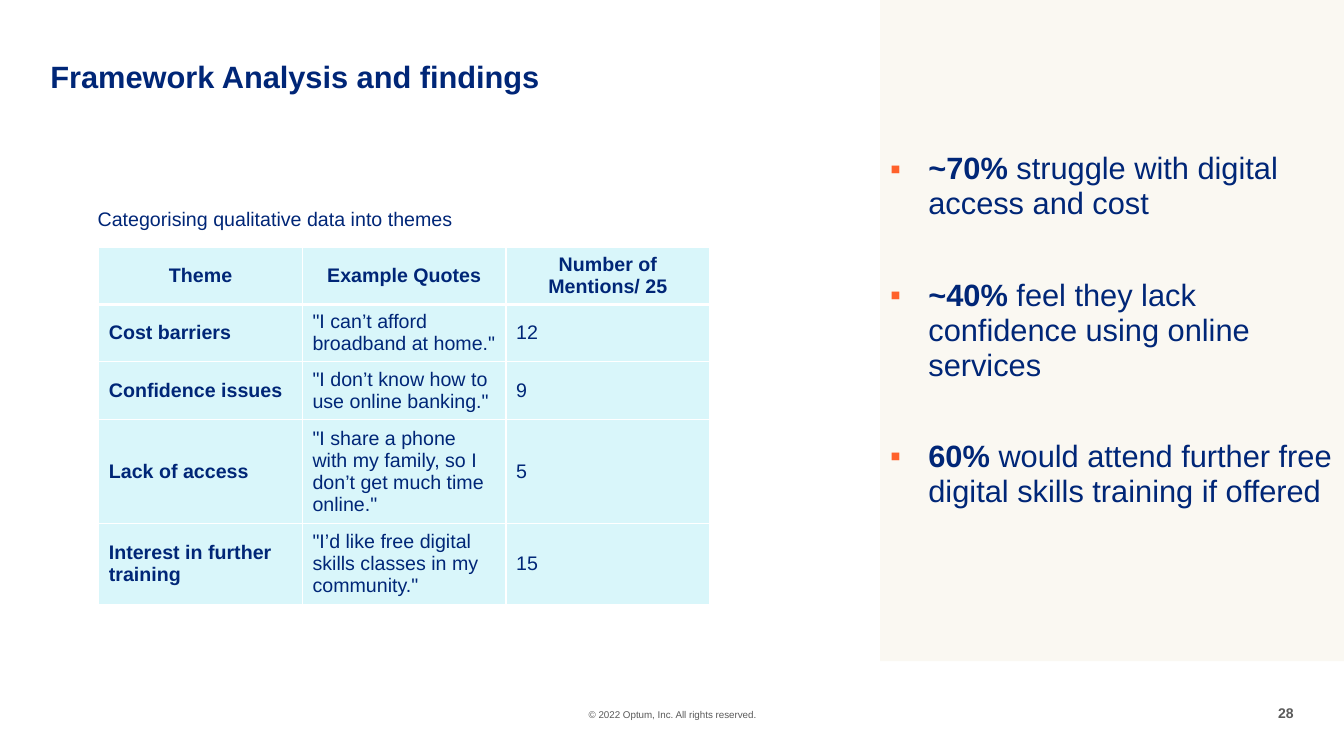
import pptx
import pptx.util
import pptx.dml.color
import pptx.enum.shapes
import pptx.enum.text
from dataclasses import dataclass
from lxml import etree
from pptx.util import Inches, Pt

ALIGN = pptx.enum.text.PP_ALIGN
MIDDLE = pptx.enum.text.MSO_ANCHOR.MIDDLE
A = "http://schemas.openxmlformats.org/drawingml/2006/main"


@dataclass(frozen=True)
class Theme:
    font: str = "Arial"
    navy: str = "002677"
    grey: str = "5A5A5A"
    orange: str = "FF612B"
    cream: str = "FAF8F2"
    aqua: str = "D9F6FA"
    white: str = "FFFFFF"
    heading: int = 22
    body: int = 14
    page: int = 10
    legal: int = 7


T = Theme()

FINDINGS = [
    ("~70% ", "struggle with digital access and cost"),
    ("~40% ", "feel they lack confidence using online services"),
    ("60% ", "would attend further free digital skills training if offered"),
]
THEMES = [
    ("Theme", "Example Quotes", "Number of Mentions/ 25"),
    ("Cost barriers", '"I can’t afford broadband at home."', "12"),
    ("Confidence issues", '"I don’t know how to use online banking."', "9"),
    ("Lack of access", '"I share a phone with my family, so I don’t get much time online."', "5"),
    ("Interest in further training", '"I’d like free digital skills classes in my community."', "15"),
]
ROW_HEIGHTS = [0.57, 0.57, 0.57, 1.03, 0.79]


def rgb(value):
    return pptx.dml.color.RGBColor.from_string(value)


def add_run(p, text, size, color=T.navy, bold=False):
    r = p.add_run()
    r.text = text
    r.font.name = T.font
    r.font.size = Pt(size)
    r.font.bold = bold
    r.font.color.rgb = rgb(color)


def add_text(s, box, text, size, color=T.navy, bold=False, align=ALIGN.LEFT,
             inset=0, wrap=True, spacing=None):
    tf = s.shapes.add_textbox(*map(Inches, box)).text_frame
    tf.word_wrap = wrap
    tf.margin_left = tf.margin_right = Inches(inset)
    tf.margin_top = tf.margin_bottom = Inches(inset / 2)
    p = tf.paragraphs[0]
    p.alignment = align
    if spacing:
        p.line_spacing = spacing
    add_run(p, text, size, color, bold)


def add_bullet(p, indent):
    pPr = p._p.get_or_add_pPr()
    pPr.set("marL", str(Inches(indent)))
    pPr.set("indent", str(-Inches(indent)))
    color = etree.SubElement(pPr, f"{{{A}}}buClr")
    etree.SubElement(color, f"{{{A}}}srgbClr", val=T.orange)
    etree.SubElement(pPr, f"{{{A}}}buFont", typeface=T.font)
    etree.SubElement(pPr, f"{{{A}}}buChar", char="▪")


def add_findings_panel(s, box, findings):
    sp = s.shapes.add_shape(pptx.enum.shapes.MSO_SHAPE.RECTANGLE, *map(Inches, box))
    sp.shadow.inherit = False
    sp.fill.solid()
    sp.fill.fore_color.rgb = rgb(T.cream)
    sp.line.fill.background()
    tf = sp.text_frame
    tf.word_wrap = True
    tf.vertical_anchor = MIDDLE
    for i, (share, finding) in enumerate(findings):
        p = tf.add_paragraph() if i else tf.paragraphs[0]
        add_bullet(p, 0.38)
        p.alignment = ALIGN.LEFT
        p.line_spacing = 0.95
        # Gaps only between the findings keep the block centred
        p.space_before = Pt(20 if i else 0)
        p.space_after = Pt(20 if i < len(findings) - 1 else 0)
        add_run(p, share, T.heading, bold=True)
        add_run(p, finding, T.heading)


def set_borders(cell, widths):
    tcPr = cell._tc.get_or_add_tcPr()
    for i, (side, width) in enumerate(widths.items()):
        ln = etree.Element(f"{{{A}}}ln{side}", w=str(Pt(width)))
        fill = etree.SubElement(ln, f"{{{A}}}solidFill")
        etree.SubElement(fill, f"{{{A}}}srgbClr", val=T.white)
        tcPr.insert(i, ln)


def add_theme_table(s, left, top, col_width, row_heights, rows):
    cols = len(rows[0])
    table = s.shapes.add_table(len(rows), cols, Inches(left), Inches(top),
                               Inches(col_width * cols), Inches(sum(row_heights))).table
    for col in table.columns:
        col.width = Inches(col_width)
    for i, (row, height) in enumerate(zip(rows, row_heights)):
        table.rows[i].height = Inches(height)
        for j, text in enumerate(row):
            cell = table.cell(i, j)
            cell.fill.solid()
            cell.fill.fore_color.rgb = rgb(T.aqua)
            cell.vertical_anchor = MIDDLE
            # The rule under the header row is heavier
            set_borders(cell, {"L": 1, "R": 1, "T": 3 if i == 1 else 1, "B": 1 if i else 3})
            p = cell.text_frame.paragraphs[0]
            p.alignment = ALIGN.LEFT if i else ALIGN.CENTER
            add_run(p, text, T.body, bold=i == 0 or j == 0)


def main():
    prs = pptx.Presentation()
    prs.slide_width, prs.slide_height = Inches(13.33), Inches(7.5)
    s = prs.slides.add_slide(prs.slide_layouts[6])

    # Footer
    add_text(s, (5.14, 7.03, 3.06, 0.12), "© 2022 Optum, Inc. All rights reserved.",
             T.legal, T.grey, align=ALIGN.CENTER)
    add_text(s, (12.66, 6.99, 0.17, 0.17), "28", T.page, T.grey, bold=True,
             align=ALIGN.RIGHT, wrap=False)

    # Title
    add_text(s, (0.5, 0.61, 10.5, 0.33), "Framework Analysis and findings",
             T.heading, bold=True, spacing=0.9)

    # Findings
    add_findings_panel(s, (8.73, 0, 4.61, 6.56), FINDINGS)

    # Themes with their caption
    add_text(s, (0.87, 2, 5.23, 0.34), "Categorising qualitative data into themes",
             T.body, inset=0.1)
    add_theme_table(s, 0.98, 2.45, 2.02, ROW_HEIGHTS, THEMES)

    prs.save("out.pptx")


if __name__ == "__main__":
    main()
